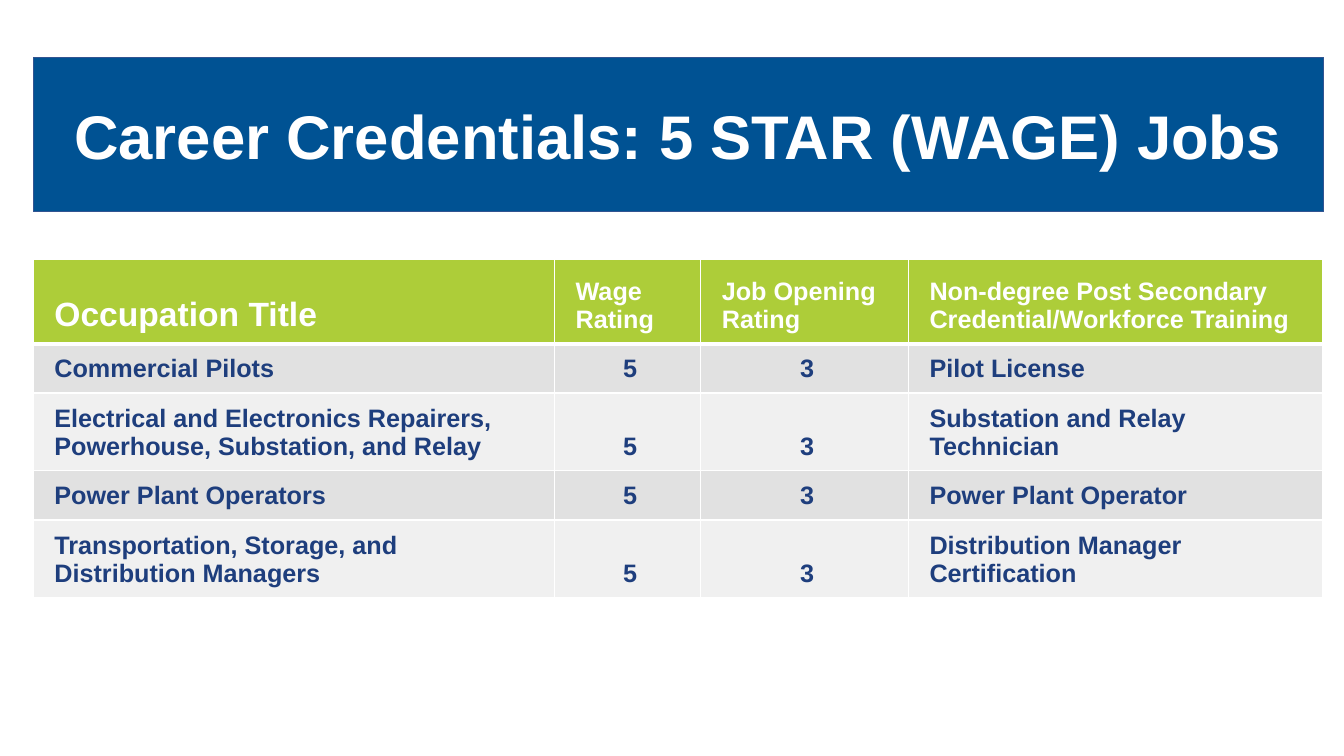
from lxml import etree
from pptx import Presentation
from pptx.dml.color import RGBColor
from pptx.enum.shapes import MSO_SHAPE as Shape
from pptx.enum.text import MSO_ANCHOR as Anchor, PP_ALIGN as Align
from pptx.oxml.ns import qn
from pptx.util import Inches, Pt

TITLE = "Career Credentials: 5 STAR (WAGE) Jobs"
HEADERS = ["Occupation Title", "Wage Rating", "Job Opening Rating",
           "Non-degree Post Secondary Credential/Workforce Training"]
JOBS = [
    ("Commercial Pilots", "5", "3", "Pilot License"),
    ("Electrical and Electronics Repairers, Powerhouse, Substation, and Relay",
     "5", "3", "Substation and Relay Technician"),
    ("Power Plant Operators", "5", "3", "Power Plant Operator"),
    ("Transportation, Storage, and Distribution Managers",
     "5", "3", "Distribution Manager Certification"),
]
COLUMN_WIDTHS = [5.17, 1.45, 2.06, 4.11]
ROW_HEIGHTS = [0.84, 0.49, 0.77, 0.49, 0.77]
RATING_COLUMNS = (1, 2)
LEFT, WIDTH = 0.33, 12.8

WHITE = RGBColor(0xFF, 0xFF, 0xFF)
BLUE = RGBColor(0x00, 0x52, 0x93)
OUTLINE = RGBColor(0x32, 0x54, 0x91)
NAVY = RGBColor(0x1E, 0x3E, 0x7D)
GREEN = RGBColor(0xAD, 0xCD, 0x39)
BANDS = [RGBColor(0xE1, 0xE1, 0xE1), RGBColor(0xF0, 0xF0, 0xF0)]


def write(text_frame, text, size=18, color=WHITE, align=Align.LEFT, spacing=1.0):
    text_frame.word_wrap = True
    paragraph = text_frame.paragraphs[0]
    paragraph.alignment = align
    paragraph.line_spacing = spacing
    run = paragraph.add_run()
    run.text = text
    run.font.name = "Arial"
    run.font.size = Pt(size)
    run.font.bold = True
    run.font.color.rgb = color


def set_borders(cell, top=1, bottom=1):
    """Give the cell white borders; call before its fill is set."""
    properties = cell._tc.get_or_add_tcPr()
    for side, width in (("L", 1), ("R", 1), ("T", top), ("B", bottom)):
        line = etree.SubElement(properties, qn(f"a:ln{side}"), w=str(Pt(width)))
        fill = etree.SubElement(line, qn("a:solidFill"))
        etree.SubElement(fill, qn("a:srgbClr"), val=str(WHITE))


def add_title(slide):
    banner = slide.shapes.add_shape(Shape.RECTANGLE, Inches(LEFT), Inches(0.57),
                                    Inches(WIDTH), Inches(1.53))
    banner.shadow.inherit = False
    banner.fill.solid()
    banner.fill.fore_color.rgb = BLUE
    banner.line.color.rgb = OUTLINE
    banner.line.width = Pt(1)
    banner.text_frame.vertical_anchor = Anchor.MIDDLE
    write(banner.text_frame, TITLE, size=44, align=Align.CENTER)


def add_jobs_table(slide):
    rows = [HEADERS, *JOBS]
    table = slide.shapes.add_table(len(rows), len(HEADERS), Inches(LEFT), Inches(2.57),
                                   Inches(WIDTH), Inches(sum(ROW_HEIGHTS))).table
    for column, width in zip(table.columns, COLUMN_WIDTHS):
        column.width = Inches(width)
    for row, height in zip(table.rows, ROW_HEIGHTS):
        row.height = Inches(height)
    for r, texts in enumerate(rows):
        header = r == 0
        for c, text in enumerate(texts):
            cell = table.cell(r, c)
            set_borders(cell, top=3 if r == 1 else 1, bottom=3 if header else 1)
            cell.fill.solid()
            cell.fill.fore_color.rgb = GREEN if header else BANDS[(r - 1) % 2]
            cell.vertical_anchor = Anchor.BOTTOM
            cell.margin_left, cell.margin_right = Inches(0.21), Inches(0.16)
            cell.margin_top = cell.margin_bottom = Inches(0.1)
            centered = not header and c in RATING_COLUMNS
            write(cell.text_frame, text, size=24 if header and c == 0 else 18,
                  color=WHITE if header else NAVY,
                  align=Align.CENTER if centered else Align.LEFT, spacing=0.97)


def main():
    presentation = Presentation()
    presentation.slide_width, presentation.slide_height = Inches(13.33), Inches(7.5)
    slide = presentation.slides.add_slide(presentation.slide_layouts[6])
    add_jobs_table(slide)
    add_title(slide)
    presentation.save("out.pptx")


if __name__ == "__main__":
    main()
